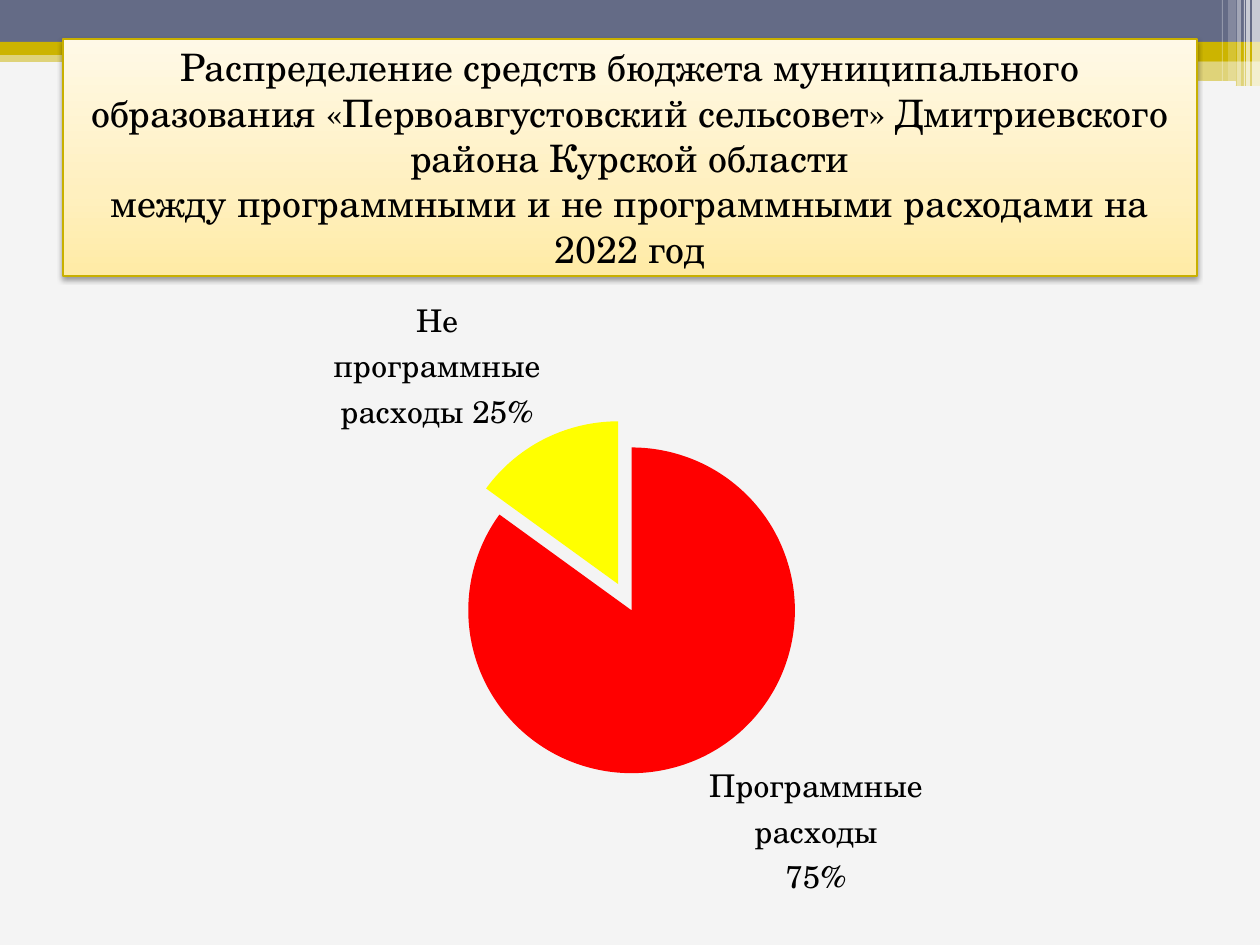
import pptx
import pptx.chart.data
import pptx.dml.color
import pptx.enum.chart
import pptx.enum.shapes
import pptx.enum.text
import pptx.oxml
import pptx.oxml.ns
import pptx.util

SCALE = 914400 / 126
FONT = "TeX Gyre Schola"
NAMESPACE = pptx.oxml.ns.nsdecls("a")
SHAPES = pptx.enum.shapes.MSO_SHAPE
GOLD, SLATE, PAPER, WHITE = "CCB400", "646B86", "F4F4F4", "FFFFFF"


def px(length):
    return pptx.util.Emu(round(length * SCALE))


def color(value):
    return pptx.dml.color.RGBColor.from_string(value)


def write(frame, text, size=18, fill="000000", align=pptx.enum.text.PP_ALIGN.CENTER):
    frame.text = text
    for para in frame.paragraphs:
        para.alignment = align
        for span in para.runs:
            span.font.name = FONT
            span.font.size = pptx.util.Pt(size)
            span.font.color.rgb = color(fill)


class Page:
    """Builds the elements of one slide in a shared style."""

    def __init__(self, deck):
        self.slide = deck.slides.add_slide(deck.slide_layouts[6])
        background = self.slide.background.fill
        background.solid()
        background.fore_color.rgb = color(PAPER)

    def bar(self, left, top, width, height, fill, opacity=100, kind=SHAPES.RECTANGLE):
        box = self.slide.shapes.add_shape(kind, px(left), px(top), px(width), px(height))
        box.shadow.inherit = False
        box.line.fill.background()
        box.fill.solid()
        box.fill.fore_color.rgb = color(fill)
        if opacity < 100:
            shade = box.fill._xPr.find(".//" + pptx.oxml.ns.qn("a:srgbClr"))
            shade.append(pptx.oxml.parse_xml(f'<a:alpha {NAMESPACE} val="{opacity * 1000}"/>'))
        return box

    def title(self, left, top, width, height, text, stops):
        box = self.bar(left, top, width, height, WHITE)
        box.line.color.rgb = color("C8B000")
        box.line.width = pptx.util.Pt(0.75)
        marks = "".join(
            f'<a:gs pos="{place * 1000}"><a:srgbClr val="{fill}"/></a:gs>' for place, fill in stops)
        gradient = pptx.oxml.parse_xml(
            f'<a:gradFill {NAMESPACE}><a:gsLst>{marks}</a:gsLst><a:lin ang="16200000"/></a:gradFill>')
        properties = box.fill._xPr
        properties.replace(properties.find(pptx.oxml.ns.qn("a:solidFill")), gradient)
        properties.find(pptx.oxml.ns.qn("a:effectLst")).append(pptx.oxml.parse_xml(
            f'<a:outerShdw {NAMESPACE} blurRad="39370" dist="20320" dir="5400000">'
            '<a:srgbClr val="000000"><a:alpha val="38000"/></a:srgbClr></a:outerShdw>'))
        frame = box.text_frame
        frame.word_wrap = True
        frame.margin_top = frame.margin_bottom = 0
        frame.vertical_anchor = pptx.enum.text.MSO_ANCHOR.MIDDLE
        write(frame, text, size=21.6)

    def pie(self, left, top, width, height, slices, center, radius, explosion):
        data = pptx.chart.data.CategoryChartData()
        data.categories = [name for name, *_ in slices]
        data.add_series("Series 1", [value for _, value, *_ in slices])
        chart = self.slide.shapes.add_chart(
            pptx.enum.chart.XL_CHART_TYPE.PIE, px(left), px(top), px(width), px(height), data).chart
        chart.has_legend = chart.has_title = False
        chart.font.name = FONT
        chart.font.size = pptx.util.Pt(18)
        chart.font.color.rgb = color("000000")
        plot = chart.plots[0]
        plot.vary_by_categories = True
        for index, (_, _, fill, label) in enumerate(slices):
            point = plot.series[0].points[index]
            point.format.fill.solid()
            point.format.fill.fore_color.rgb = color(fill)
            point.data_label.position = pptx.enum.chart.XL_LABEL_POSITION.OUTSIDE_END
            write(point.data_label.text_frame, label)
        last = plot.series[0]._element.findall(pptx.oxml.ns.qn("c:dPt"))[-1]
        last.find(pptx.oxml.ns.qn("c:idx")).addnext(pptx.oxml.parse_xml(
            f'<c:explosion {pptx.oxml.ns.nsdecls("c")} val="{explosion}"/>'))
        reach = radius * (1 + explosion / 100)
        layout = {"x": (center[0] - reach - left) / width, "y": (center[1] - reach - top) / height,
                  "w": 2 * reach / width, "h": 2 * reach / height}
        values = "".join(f'<c:{key} val="{value:.2f}"/>' for key, value in layout.items())
        area = chart._chartSpace.chart.plotArea
        for old in area.findall(pptx.oxml.ns.qn("c:layout")):
            area.remove(old)
        area.insert(0, pptx.oxml.parse_xml(
            f'<c:layout {pptx.oxml.ns.nsdecls("c")}><c:manualLayout><c:layoutTarget val="inner"/>'
            f'<c:xMode val="edge"/><c:yMode val="edge"/>{values}</c:manualLayout></c:layout>'))


def main():
    deck = pptx.Presentation()
    deck.slide_width, deck.slide_height = px(1260), px(945)
    page = Page(deck)
    page.bar(0, 50, 1260, 12, GOLD, 50)
    page.bar(0, 0, 1260, 42, SLATE)
    page.bar(0, 42, 1260, 13, GOLD)
    page.bar(746, 49, 514, 12, GOLD)
    page.bar(746, 61, 514, 25, GOLD, 50)
    for left, top, width, height in [(745, 68, 422, 4), (1016, 81, 220, 5)]:
        page.bar(left, top, width, height, PAPER, kind=SHAPES.ROUNDED_RECTANGLE)
    stripes = [(1252, 8, 86, 65), (1246, 4, 86, 65), (1244, 1, 86, 60),
               (1237, 4, 86, 40), (1228, 8, 81, 20), (1222, 1, 81, 30)]
    for left, width, height, opacity in stripes:
        page.bar(left, 0, width, height, WHITE, opacity)
    page.title(
        63, 39, 1134, 237,
        "Распределение средств бюджета муниципального образования «Первоавгустовский сельсовет» "
        "Дмитриевского района Курской области\vмежду программными и не программными расходами на 2022 год",
        [(0, "FFEBA5"), (35, "FFF0BF"), (100, "FFF9E7")])
    page.pie(
        59, 295, 1134, 605,
        [("Программные расходы", 85, "FF0000", "Программные расходы\n75%"),
         ("Не программные расходы", 15, "FFFF00", "Не программные расходы 25%")],
        center=(630, 611), radius=139, explosion=18)
    deck.save("out.pptx")


if __name__ == "__main__":
    main()
